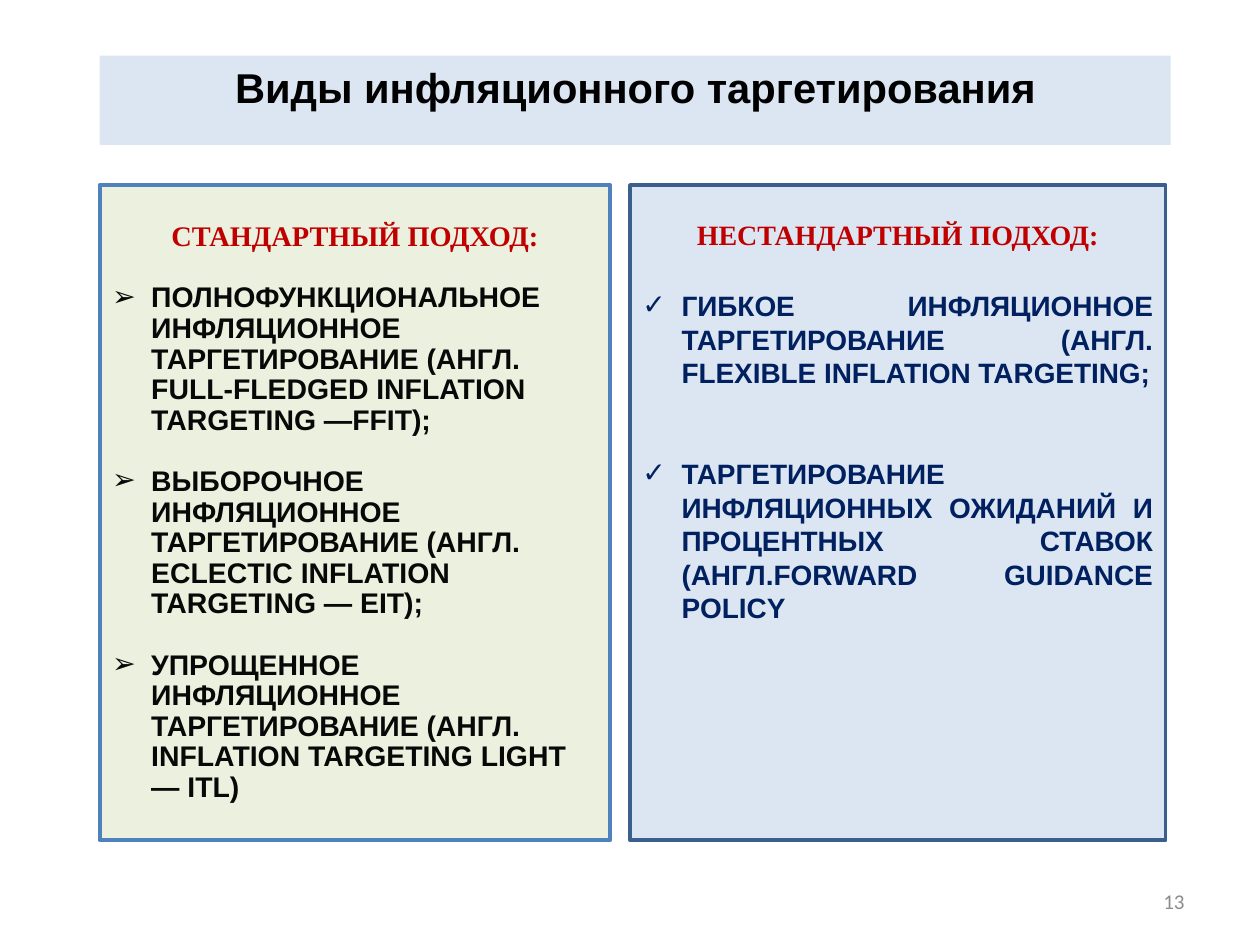
from lxml.etree import SubElement
from pptx import Presentation
from pptx.dml.color import RGBColor
from pptx.enum.shapes import MSO_SHAPE
from pptx.enum.text import MSO_ANCHOR, MSO_AUTO_SIZE, PP_ALIGN
from pptx.oxml.ns import qn
from pptx.util import Cm, Pt

COLORS = {
    "pale_blue": "DCE6F2", "pale_green": "EBF1DE",
    "blue": "4F81BD", "dark_blue": "3A5F8C", "navy": "002060",
    "red": "C00000", "black": "000000", "ink": "080808", "gray": "8C8C8C",
}
PANEL_TOP, PANEL_HEIGHT = 3.73, 13.21
STANDARD = [
    "ПОЛНОФУНКЦИОНАЛЬНОЕ ИНФЛЯЦИОННОЕ ТАРГЕТИРОВАНИЕ (АНГЛ. FULL-FLEDGED INFLATION TARGETING —FFIT);",
    "ВЫБОРОЧНОЕ ИНФЛЯЦИОННОЕ ТАРГЕТИРОВАНИЕ (АНГЛ. ECLECTIC INFLATION TARGETING — EIT);",
    "УПРОЩЕННОЕ ИНФЛЯЦИОННОЕ ТАРГЕТИРОВАНИЕ (АНГЛ. INFLATION TARGETING LIGHT — ITL)",
]
NONSTANDARD = [
    "ГИБКОЕ ИНФЛЯЦИОННОЕ ТАРГЕТИРОВАНИЕ (АНГЛ. FLEXIBLE INFLATION TARGETING;",
    "ТАРГЕТИРОВАНИЕ ИНФЛЯЦИОННЫХ ОЖИДАНИЙ И ПРОЦЕНТНЫХ СТАВОК (АНГЛ.FORWARD GUIDANCE POLICY",
]


class SlideBuilder:
    """Holds the style and the current slide, and adds its elements."""

    def __init__(self, presentation):
        self.slide = presentation.slides.add_slide(presentation.slide_layouts[5])

    def color(self, name):
        return RGBColor.from_string(COLORS[name])

    def fill(self, shape, name):
        shape.fill.solid()
        shape.fill.fore_color.rgb = self.color(name)

    def add_text(self, paragraph, text, size, color, font="Arial", bold=True, align=PP_ALIGN.LEFT):
        paragraph.alignment = align
        run = paragraph.add_run()
        run.text = text
        run.font.name = font
        run.font.size = Pt(size)
        run.font.bold = bold
        run.font.color.rgb = self.color(color)

    def bullet(self, paragraph, character):
        properties = paragraph._p.get_or_add_pPr()
        properties.set("marL", str(Cm(0.79)))
        properties.set("indent", str(Cm(-0.79)))
        SubElement(properties, qn("a:buFont"), typeface="Arial")
        SubElement(properties, qn("a:buChar"), char=character)

    def title(self, text, left, top, width, height):
        shape = self.slide.shapes.title
        shape.left, shape.top, shape.width, shape.height = map(Cm, (left, top, width, height))
        self.fill(shape, "pale_blue")
        frame = shape.text_frame
        frame.auto_size = MSO_AUTO_SIZE.NONE
        frame.vertical_anchor = MSO_ANCHOR.TOP
        self.add_text(frame.paragraphs[0], text, 23.8, "black", align=PP_ALIGN.CENTER)

    def panel(self, heading, items, left, width, fill, line, line_width, inset,
              size, color, character, pitch, gaps, align):
        shape = self.slide.shapes.add_shape(
            MSO_SHAPE.RECTANGLE, Cm(left), Cm(PANEL_TOP), Cm(width), Cm(PANEL_HEIGHT))
        shape.shadow.inherit = False
        self.fill(shape, fill)
        shape.line.color.rgb = self.color(line)
        shape.line.width = Pt(line_width)
        frame = shape.text_frame
        frame.word_wrap = True
        frame.vertical_anchor = MSO_ANCHOR.TOP
        frame.margin_top = Cm(inset)
        paragraph = frame.paragraphs[0]
        paragraph.line_spacing = Pt(pitch)
        self.add_text(paragraph, heading, size, "red", "Times New Roman", align=PP_ALIGN.CENTER)
        for item, gap in zip(items, gaps):
            paragraph = frame.add_paragraph()
            paragraph.line_spacing = Pt(pitch)
            paragraph.space_before = Pt(gap)
            self.bullet(paragraph, character)
            self.add_text(paragraph, item, size, color, align=align)

    def page_number(self, text, left, top, width, height):
        box = self.slide.shapes.add_textbox(Cm(left), Cm(top), Cm(width), Cm(height))
        frame = box.text_frame
        frame.word_wrap = True
        frame.vertical_anchor = MSO_ANCHOR.MIDDLE
        self.add_text(frame.paragraphs[0], text, 12, "gray", "Calibri", False, PP_ALIGN.RIGHT)


def main():
    presentation = Presentation()
    presentation.slide_width, presentation.slide_height = Cm(25.4), Cm(19.05)
    builder = SlideBuilder(presentation)
    builder.title("Виды инфляционного таргетирования", 2.01, 1.12, 21.59, 1.8)
    builder.panel("СТАНДАРТНЫЙ ПОДХОД:", STANDARD, left=2.01, width=10.29,
                  fill="pale_green", line="blue", line_width=2.25, inset=0.74,
                  size=16.2, color="ink", character="➢", pitch=17.5,
                  gaps=[17.5] * 3, align=PP_ALIGN.LEFT)
    builder.panel("НЕСТАНДАРТНЫЙ ПОДХОД:", NONSTANDARD, left=12.7, width=10.8,
                  fill="pale_blue", line="dark_blue", line_width=2, inset=0.66,
                  size=16, color="navy", character="✓", pitch=19.15,
                  gaps=[21.4, 38.6], align=PP_ALIGN.JUSTIFY)
    builder.page_number("13", 18.21, 17.65, 5.92, 1.02)
    presentation.save("out.pptx")


if __name__ == "__main__":
    main()
